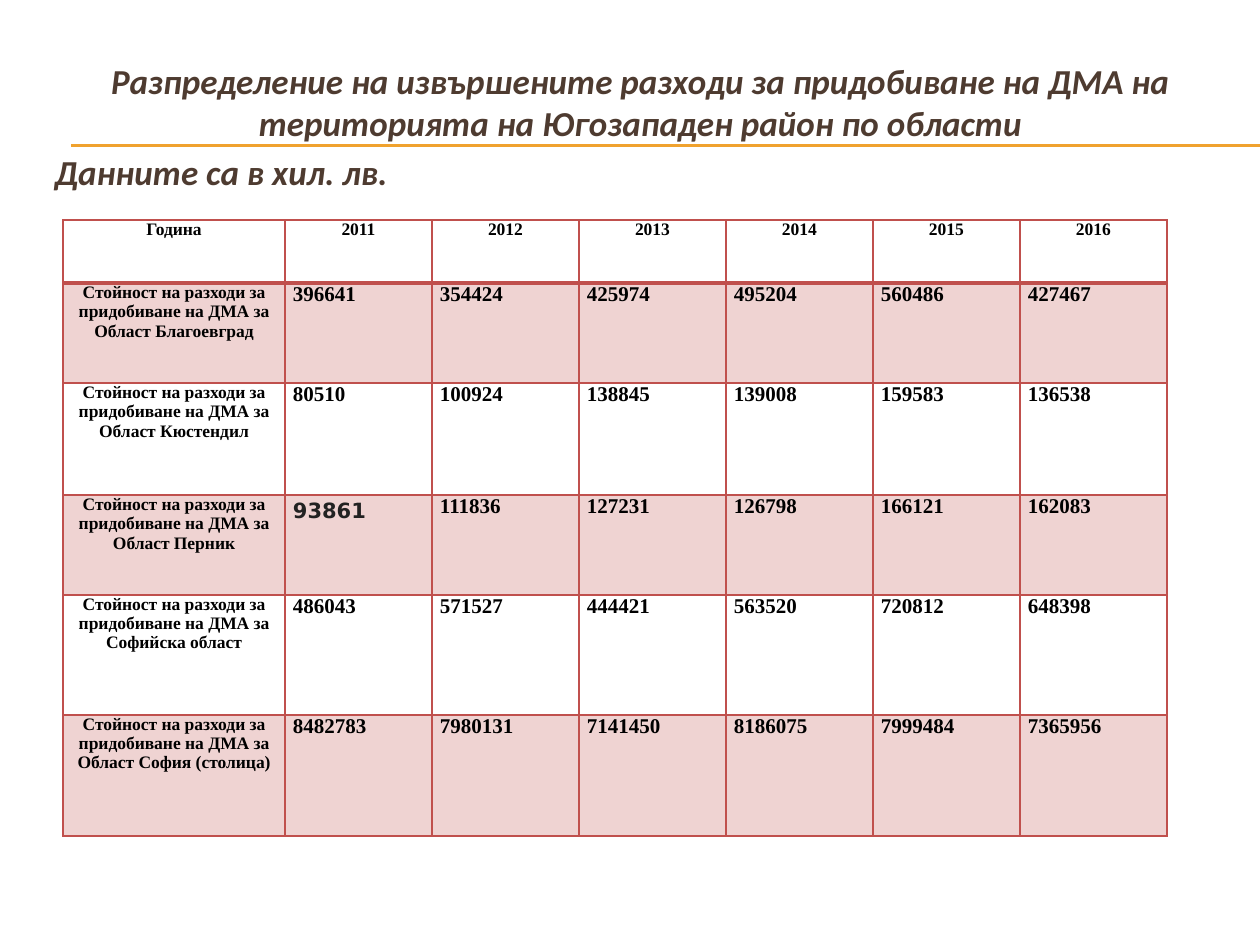
from dataclasses import dataclass

from lxml.etree import SubElement
from pptx import Presentation
from pptx.dml.color import RGBColor
from pptx.enum.shapes import MSO_CONNECTOR
from pptx.enum.text import MSO_ANCHOR, MSO_AUTO_SIZE, PP_ALIGN
from pptx.oxml.ns import qn
from pptx.util import Emu, Pt

PIXELS_PER_INCH = 126
ACCENT, BROWN, BLACK, CHARCOAL = "F0A22E", "4E3B30", "000000", "222222"
BORDER, BAND = "C0504D", "EFD3D2"

YEARS = ["2011", "2012", "2013", "2014", "2015", "2016"]
COLUMN_WIDTHS = [222] + [147] * len(YEARS)
HEADER_HEIGHT = 63
LABEL_START = "Стойност на разходи за придобиване на ДМА за "


@dataclass(frozen=True)
class TextStyle:
    size: int
    font: str = "Times New Roman"
    color: str = BLACK
    italic: bool = False
    align: PP_ALIGN = PP_ALIGN.LEFT
    line_spacing: float = 1.0


@dataclass(frozen=True)
class Region:
    name: str
    height: int
    values: tuple[int, ...]


HEADING = TextStyle(20, "Calibri", BROWN, True, PP_ALIGN.CENTER)
UNIT_NOTE = TextStyle(20, "Calibri", BROWN, True)
LABEL = TextStyle(10, align=PP_ALIGN.CENTER)
VALUE = TextStyle(12)
SPECIAL_VALUE = TextStyle(12, "DejaVu Sans", CHARCOAL, line_spacing=1.15)

REGIONS = [
    Region("Област Благоевград", 100, (396641, 354424, 425974, 495204, 560486, 427467)),
    Region("Област Кюстендил", 112, (80510, 100924, 138845, 139008, 159583, 136538)),
    Region("Област Перник", 100, (93861, 111836, 127231, 126798, 166121, 162083)),
    Region("Софийска област", 120, (486043, 571527, 444421, 563520, 720812, 648398)),
    Region("Област София (столица)", 121,
           (8482783, 7980131, 7141450, 8186075, 7999484, 7365956)),
]


def px(pixels: int) -> Emu:
    return Emu(round(pixels * 914400 / PIXELS_PER_INCH))


def rgb(color: str) -> RGBColor:
    return RGBColor.from_string(color)


def write_paragraph(paragraph, text: str, style: TextStyle) -> None:
    paragraph.alignment = style.align
    paragraph.line_spacing = style.line_spacing
    run = paragraph.add_run()
    run.text = text
    run.font.size = Pt(style.size)
    run.font.name = style.font
    run.font.bold = True
    run.font.italic = style.italic
    run.font.color.rgb = rgb(style.color)


def add_rule(slide, top: int) -> None:
    rule = slide.shapes.add_connector(
        MSO_CONNECTOR.STRAIGHT, px(71), px(top), px(1260), px(top))
    rule.line.color.rgb = rgb(ACCENT)
    rule.line.width = Pt(0.75)
    SubElement(rule._element.spPr, qn("a:effectLst"))


def fill_heading(body) -> None:
    body.left, body.top, body.width, body.height = px(42), px(53), px(1197), px(158)
    frame = body.text_frame
    frame.word_wrap = True
    frame.auto_size = MSO_AUTO_SIZE.NONE
    frame.vertical_anchor = MSO_ANCHOR.TOP
    lines = [
        ("Разпределение на извършените разходи за придобиване на ДМА на "
         "територията на Югозападен район по области", HEADING),
        ("Данните са в хил. лв.", UNIT_NOTE),
    ]
    for index, (text, style) in enumerate(lines):
        paragraph = frame.add_paragraph() if index else frame.paragraphs[0]
        write_paragraph(paragraph, text, style)
        paragraph.space_before = Pt(4)
        properties = paragraph._p.get_or_add_pPr()
        properties.set("marL", "0")
        properties.set("indent", "0")
        SubElement(properties, qn("a:buNone"))


def set_borders(cell, row: int) -> None:
    """Draw thin borders, with a thick one between header and data rows."""
    widths = {
        "lnL": 1,
        "lnR": 1,
        "lnT": 2.25 if row == 1 else 1,
        "lnB": 2.25 if row == 0 else 1,
    }
    properties = cell._tc.get_or_add_tcPr()
    for side, width in widths.items():
        line = SubElement(properties, qn(f"a:{side}"), w=str(Pt(width)))
        fill = SubElement(line, qn("a:solidFill"))
        SubElement(fill, qn("a:srgbClr"), val=BORDER)


def fill_cell(cell, row: int, text: str, style: TextStyle) -> None:
    cell.margin_left = cell.margin_right = px(8)
    cell.margin_top = cell.margin_bottom = 0
    cell.vertical_anchor = MSO_ANCHOR.TOP
    set_borders(cell, row)
    if row % 2:
        cell.fill.solid()
        cell.fill.fore_color.rgb = rgb(BAND)
    else:
        cell.fill.background()
    write_paragraph(cell.text_frame.paragraphs[0], text, style)


def value_style(region: Region, year: str) -> TextStyle:
    is_special = (region.name, year) == ("Област Перник", "2011")
    return SPECIAL_VALUE if is_special else VALUE


def add_expense_table(slide) -> None:
    heights = [HEADER_HEIGHT] + [region.height for region in REGIONS]
    table = slide.shapes.add_table(
        len(heights), len(COLUMN_WIDTHS), px(63), px(220),
        px(sum(COLUMN_WIDTHS)), px(sum(heights))).table
    table.first_row = table.horz_banding = False
    for column, width in zip(table.columns, COLUMN_WIDTHS):
        column.width = px(width)
    for row, height in zip(table.rows, heights):
        row.height = px(height)

    for column, text in enumerate(["Година"] + YEARS):
        fill_cell(table.cell(0, column), 0, text, LABEL)
    for row, region in enumerate(REGIONS, start=1):
        fill_cell(table.cell(row, 0), row, LABEL_START + region.name, LABEL)
        for column, (year, value) in enumerate(zip(YEARS, region.values), start=1):
            fill_cell(table.cell(row, column), row, str(value), value_style(region, year))


def main() -> None:
    presentation = Presentation()
    presentation.slide_width, presentation.slide_height = px(1260), px(945)
    slide = presentation.slides.add_slide(presentation.slide_layouts[1])
    title = slide.shapes.title._element
    title.getparent().remove(title)
    for top in (145, 146):
        add_rule(slide, top)
    fill_heading(slide.placeholders[1])
    add_expense_table(slide)
    presentation.save("out.pptx")


if __name__ == "__main__":
    main()
